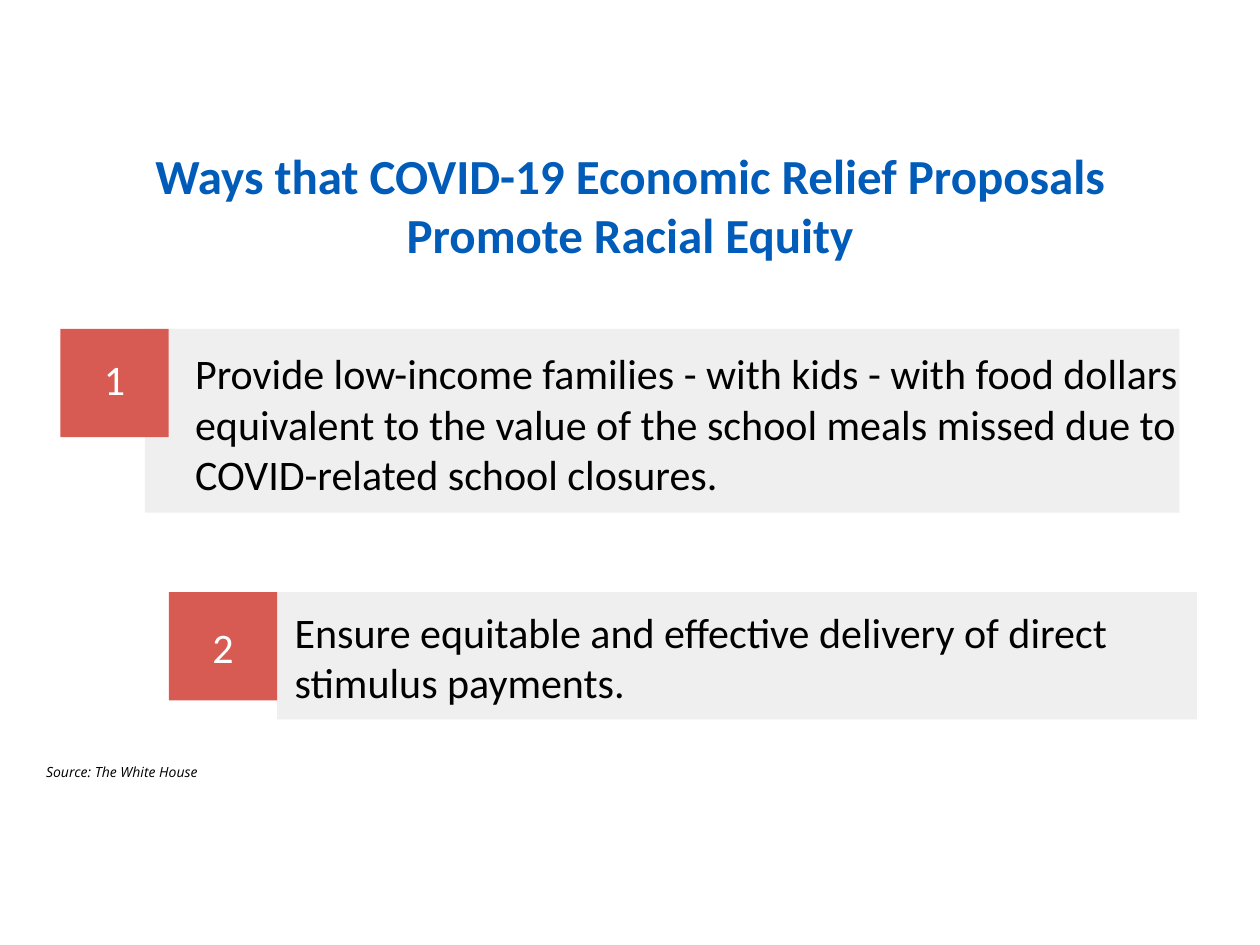
from dataclasses import dataclass

from pptx import Presentation
from pptx.dml.color import RGBColor
from pptx.enum.shapes import MSO_SHAPE
from pptx.enum.text import MSO_ANCHOR, PP_ALIGN
from pptx.util import Inches, Pt

RECT = MSO_SHAPE.RECTANGLE
TOP, MIDDLE = MSO_ANCHOR.TOP, MSO_ANCHOR.MIDDLE
LEFT, CENTER, RIGHT = PP_ALIGN.LEFT, PP_ALIGN.CENTER, PP_ALIGN.RIGHT
WIDTH, HEIGHT = 10, 7.5
BADGE = 0.86


@dataclass(frozen=True)
class Theme:
    """Colours, fonts and type sizes of the slide."""
    title: str = "005CB8"
    panel: str = "EFEFEF"
    badge: str = "D85B53"
    ink: str = "000000"
    light: str = "FFFFFF"
    font: str = "Calibri"
    source_font: str = "Open Sans"
    title_size: int = 28
    body_size: int = 24
    source_size: int = 8


THEME = Theme()


def add_rect(s, box, color):
    """Draw a plain filled rectangle."""
    sp = s.shapes.add_shape(RECT, *map(Inches, box))
    sp.shadow.inherit = False
    sp.fill.solid()
    sp.fill.fore_color.rgb = RGBColor.from_string(color)
    sp.line.fill.background()


def add_text(s, box, text, size, color, font=THEME.font, align=LEFT,
             anchor=TOP, inset=0.1, spacing=None, bold=False, italic=False):
    """Add a wrapped text box holding one run."""
    tf = s.shapes.add_textbox(*map(Inches, box)).text_frame
    tf.word_wrap = True
    tf.vertical_anchor = anchor
    tf.margin_left = tf.margin_right = Inches(inset)
    tf.margin_top = tf.margin_bottom = Inches(inset)
    p = tf.paragraphs[0]
    p.alignment = align
    p.line_spacing = spacing
    r = p.add_run()
    r.text = text
    r.font.name = font
    r.font.size = Pt(size)
    r.font.bold = bold
    r.font.italic = italic
    r.font.color.rgb = RGBColor.from_string(color)


def add_item(s, number, left, top, panel, text_box, number_drop, text):
    """Add a numbered badge with its panel and statement."""
    add_rect(s, panel, THEME.panel)
    add_rect(s, (left, top, BADGE, BADGE), THEME.badge)
    add_text(s, (left + 0.05, top + number_drop, BADGE - 0.1, 0.6), number,
             THEME.body_size, THEME.light, align=CENTER, anchor=MIDDLE,
             inset=0.05, spacing=0.8)
    add_text(s, text_box, text, THEME.body_size, THEME.ink)


def main():
    """Build and save the slide."""
    prs = Presentation()
    prs.slide_width, prs.slide_height = Inches(WIDTH), Inches(HEIGHT)
    s = prs.slides.add_slide(prs.slide_layouts[6])
    add_text(s, (WIDTH * 0.05, 1, WIDTH * 0.9, 1.25),
             "Ways that COVID-19 Economic Relief Proposals Promote Racial Equity",
             THEME.title_size, THEME.title, align=CENTER, anchor=MIDDLE, bold=True)
    add_item(s, "1", 0.48, 2.61, (1.15, 2.61, 8.21, 1.46),
             (1.45, 2.66, 8.02, 1.41), 0.13,
             "Provide low-income families - with kids - with food dollars "
             "equivalent to the value of the school meals missed due to "
             "COVID-related school closures.")
    add_item(s, "2", 1.34, 4.7, (2.2, 4.7, 7.3, 1.01),
             (2.24, 4.71, 6.79, 1.01), 0.17,
             "Ensure equitable and effective delivery of direct stimulus payments.")
    add_text(s, (0.07, 5.99, 1.6, 0.34), "Source: The White House",
             THEME.source_size, THEME.ink, font=THEME.source_font,
             align=RIGHT, italic=True)
    prs.save("out.pptx")


if __name__ == "__main__":
    main()
